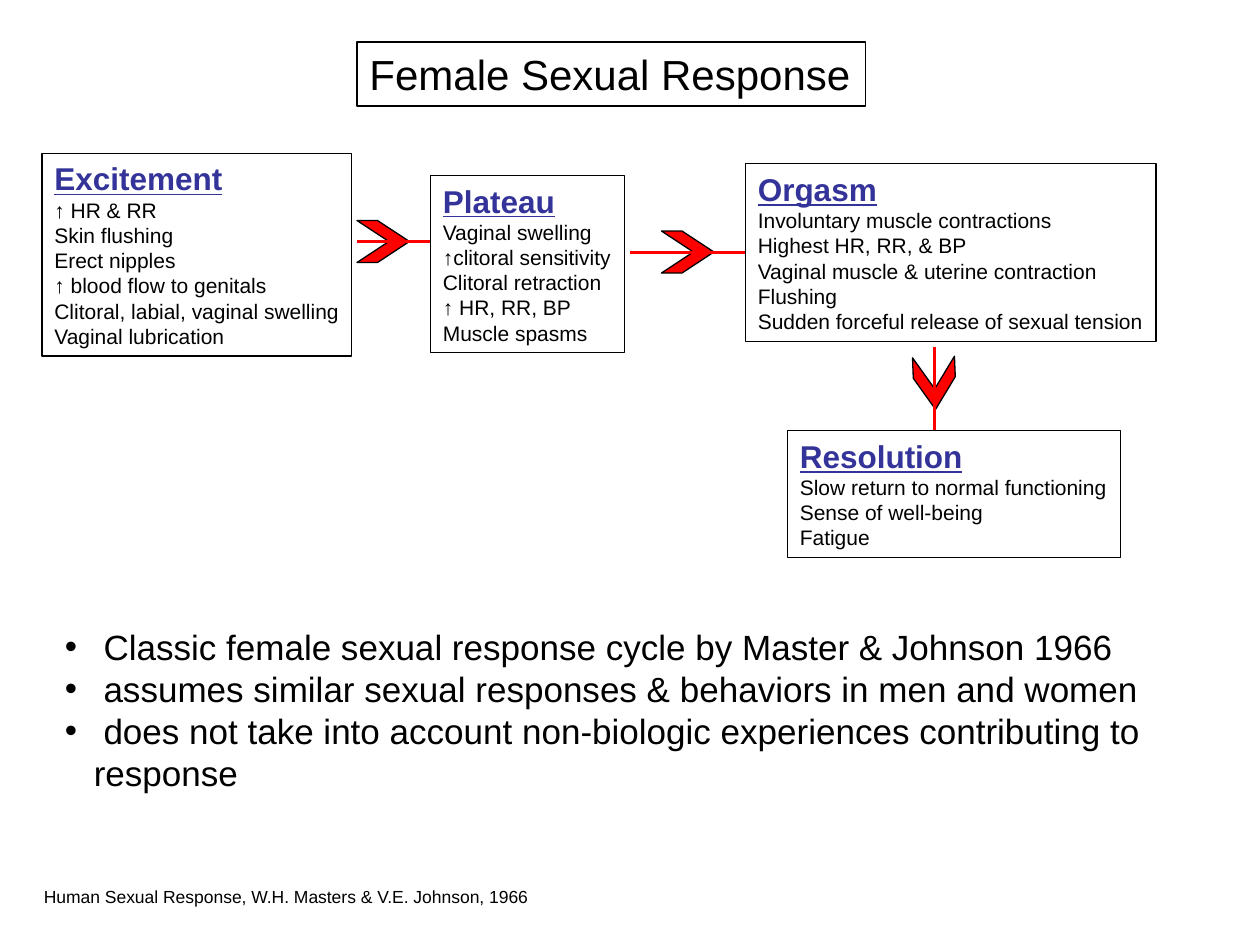
from dataclasses import dataclass
from typing import Optional

from lxml.etree import SubElement
from pptx import Presentation
from pptx.dml.color import RGBColor
from pptx.enum.shapes import MSO_CONNECTOR, MSO_SHAPE
from pptx.enum.text import MSO_ANCHOR, MSO_AUTO_SIZE, PP_ALIGN
from pptx.oxml.ns import qn
from pptx.util import Inches, Pt

COLS, ROWS = 120, 90
WIDTH, HEIGHT = Inches(10), Inches(7.5)


@dataclass(frozen=True)
class Theme:
    font: str = "Arial"
    ink: RGBColor = RGBColor(0, 0, 0)
    paper: RGBColor = RGBColor(255, 255, 255)
    heading: RGBColor = RGBColor(0x33, 0x33, 0x99)
    arrow: RGBColor = RGBColor(255, 0, 0)
    title_size: Pt = Pt(24)
    bullet_size: Pt = Pt(20)
    heading_size: Pt = Pt(18)
    body_size: Pt = Pt(12)
    source_size: Pt = Pt(10)
    outline: Pt = Pt(0.75)
    arrow_line: Pt = Pt(2.25)


THEME = Theme()
BODY = {"size": THEME.body_size}
HEADING = {"size": THEME.heading_size, "color": THEME.heading,
           "bold": True, "underline": True}


@dataclass(frozen=True)
class Cell:
    """A rectangle in grid columns and rows."""
    col: float
    row: float
    cols: float
    rows: float

    def emu(self) -> tuple:
        return x(self.col), y(self.row), x(self.cols), y(self.rows)


@dataclass(frozen=True)
class Phase:
    name: str
    cell: Cell
    signs: tuple


@dataclass(frozen=True)
class Arrow:
    start: tuple
    end: tuple
    head: Cell
    turn: float = 0
    target: Optional[str] = None


PHASES = (
    Phase("Orgasm", Cell(71, 15.6, 39.1, 16.9), (
        "Involuntary muscle contractions", "Highest HR, RR, & BP",
        "Vaginal muscle & uterine contraction", "Flushing",
        "Sudden forceful release of sexual tension")),
    Phase("Resolution", Cell(75, 41, 31.7, 12.1), (
        "Slow return to normal functioning", "Sense of well-being", "Fatigue")),
    Phase("Excitement", Cell(4, 14.6, 29.5, 19.3), (
        "↑ HR & RR", "Skin flushing", "Erect nipples",
        "↑ blood flow to genitals", "Clitoral, labial, vaginal swelling",
        "Vaginal lubrication")),
    Phase("Plateau", Cell(41, 16.7, 18.5, 16.9), (
        "Vaginal swelling", "↑clitoral sensitivity", "Clitoral retraction",
        "↑ HR, RR, BP", "Muscle spasms")),
)
ARROWS = (
    Arrow((34, 23), (41, 23), Cell(34, 21, 5, 4)),
    Arrow((60, 24.05), (71, 24.05), Cell(63, 22, 5, 4), target="Orgasm"),
    Arrow((89, 33), (89, 41), Cell(86.5, 34.5, 5, 4), turn=87.8),
)
BULLETS = (
    " Classic female sexual response cycle by Master & Johnson 1966",
    " assumes similar sexual responses & behaviors in men and women",
    " does not take into account non-biologic experiences contributing to response",
)


def x(cols: float) -> int:
    return round(WIDTH * cols / COLS)


def y(rows: float) -> int:
    return round(HEIGHT * rows / ROWS)


def write(tf, lines: list, wrap: bool = False) -> None:
    """Fill a text frame with (text, format) lines."""
    tf.word_wrap = wrap
    tf.auto_size = MSO_AUTO_SIZE.SHAPE_TO_FIT_TEXT
    tf.vertical_anchor = MSO_ANCHOR.TOP
    for i, (text, style) in enumerate(lines):
        p = tf.paragraphs[0] if i == 0 else tf.add_paragraph()
        p.alignment = PP_ALIGN.LEFT
        r = p.add_run()
        r.text = text
        values = {"name": THEME.font, "color": THEME.ink, **style}
        r.font.color.rgb = values.pop("color")
        for key, value in values.items():
            setattr(r.font, key, value)


def add_outlined(s, preset, cell: Cell, fill: Optional[RGBColor]):
    sp = s.shapes.add_shape(preset, *cell.emu())
    sp.shadow.inherit = False
    if fill is None:
        sp.fill.background()
    else:
        sp.fill.solid()
        sp.fill.fore_color.rgb = fill
    sp.line.color.rgb = THEME.ink
    sp.line.width = THEME.outline
    return sp


def add_phase(s, phase: Phase):
    sp = add_outlined(s, MSO_SHAPE.RECTANGLE, phase.cell, THEME.paper)
    write(sp.text_frame,
          [(phase.name, HEADING)] + [(sign, BODY) for sign in phase.signs])
    return sp


def add_chevron(s, arrow: Arrow) -> None:
    sp = add_outlined(s, MSO_SHAPE.CHEVRON, arrow.head, THEME.arrow)
    sp.adjustments[0] = 0.76
    sp.rotation = arrow.turn


def add_line(s, arrow: Arrow, boxes: dict) -> None:
    line = s.shapes.add_connector(
        MSO_CONNECTOR.STRAIGHT, x(arrow.start[0]), y(arrow.start[1]),
        x(arrow.end[0]), y(arrow.end[1]))
    line.line.color.rgb = THEME.arrow
    line.line.width = THEME.arrow_line
    SubElement(line._element.spPr, qn("a:effectLst"))
    if arrow.target:
        line.end_connect(boxes[arrow.target], 1)


def add_bullets(s, cell: Cell) -> None:
    tf = s.shapes.add_textbox(*cell.emu()).text_frame
    write(tf, [(text, {"size": THEME.bullet_size}) for text in BULLETS], wrap=True)
    hang = Inches(0.23)
    for p in tf.paragraphs:
        pPr = p._p.get_or_add_pPr()
        pPr.set("marL", str(hang))
        pPr.set("indent", str(-hang))
        SubElement(pPr, qn("a:buFont"), typeface=THEME.font)
        SubElement(pPr, qn("a:buChar"), char="•")


def main() -> None:
    prs = Presentation()
    prs.slide_width, prs.slide_height = WIDTH, HEIGHT
    s = prs.slides.add_slide(prs.slide_layouts[6])

    title = add_outlined(s, MSO_SHAPE.RECTANGLE, Cell(34, 4, 48.4, 6.1), None)
    write(title.text_frame,
          [("Female Sexual Response", {"size": THEME.title_size})])
    source = s.shapes.add_textbox(*Cell(3, 83.8, 49.1, 3.2).emu())
    write(source.text_frame,
          [("Human Sexual Response, W.H. Masters & V.E. Johnson, 1966",
            {"size": THEME.source_size})])
    source.text_frame.vertical_anchor = MSO_ANCHOR.MIDDLE

    boxes = {phase.name: add_phase(s, phase) for phase in PHASES}
    for arrow in ARROWS:
        add_chevron(s, arrow)
    add_bullets(s, Cell(5, 59, 109, 25.2))
    for arrow in ARROWS:
        add_line(s, arrow, boxes)
    prs.save("out.pptx")


if __name__ == "__main__":
    main()
